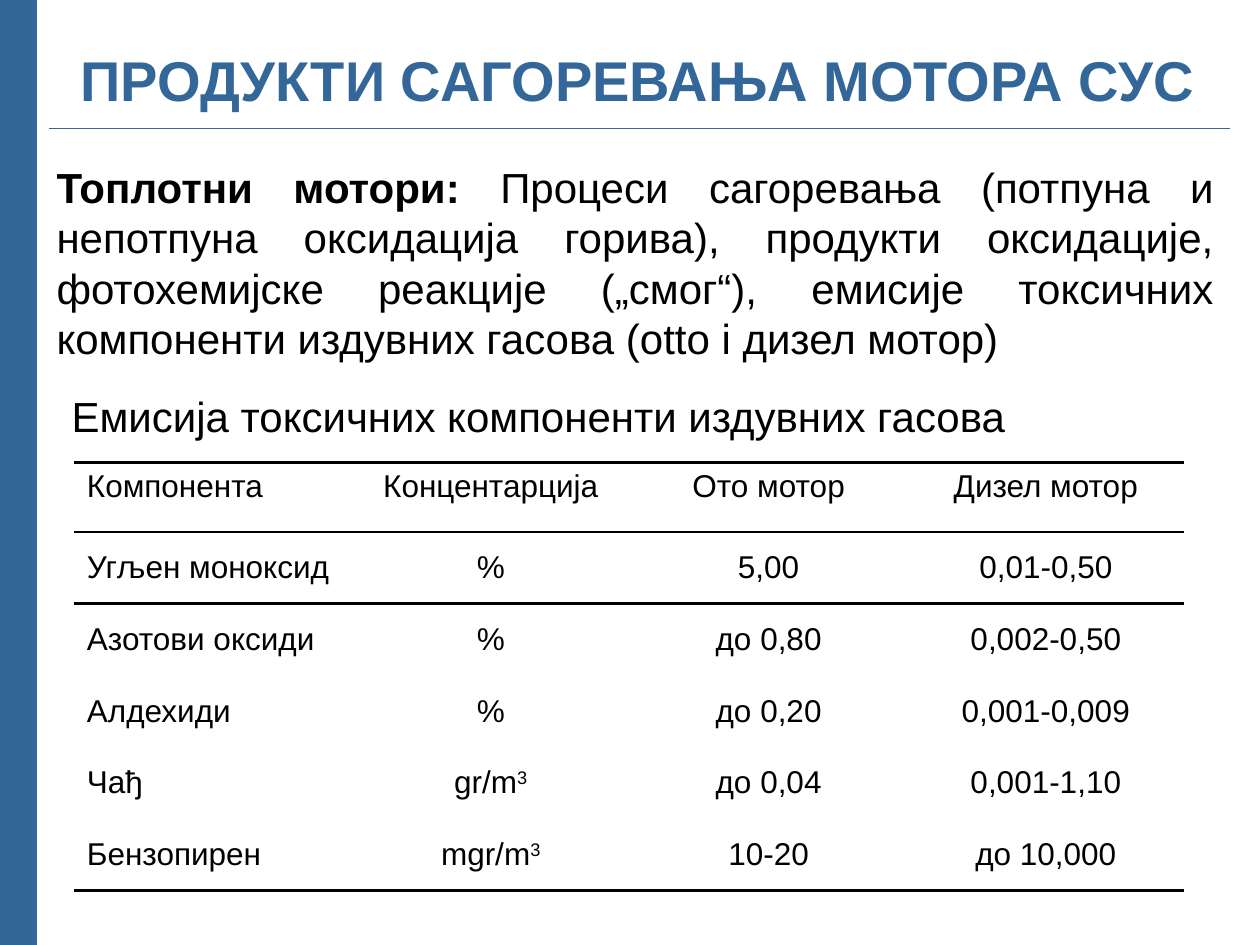
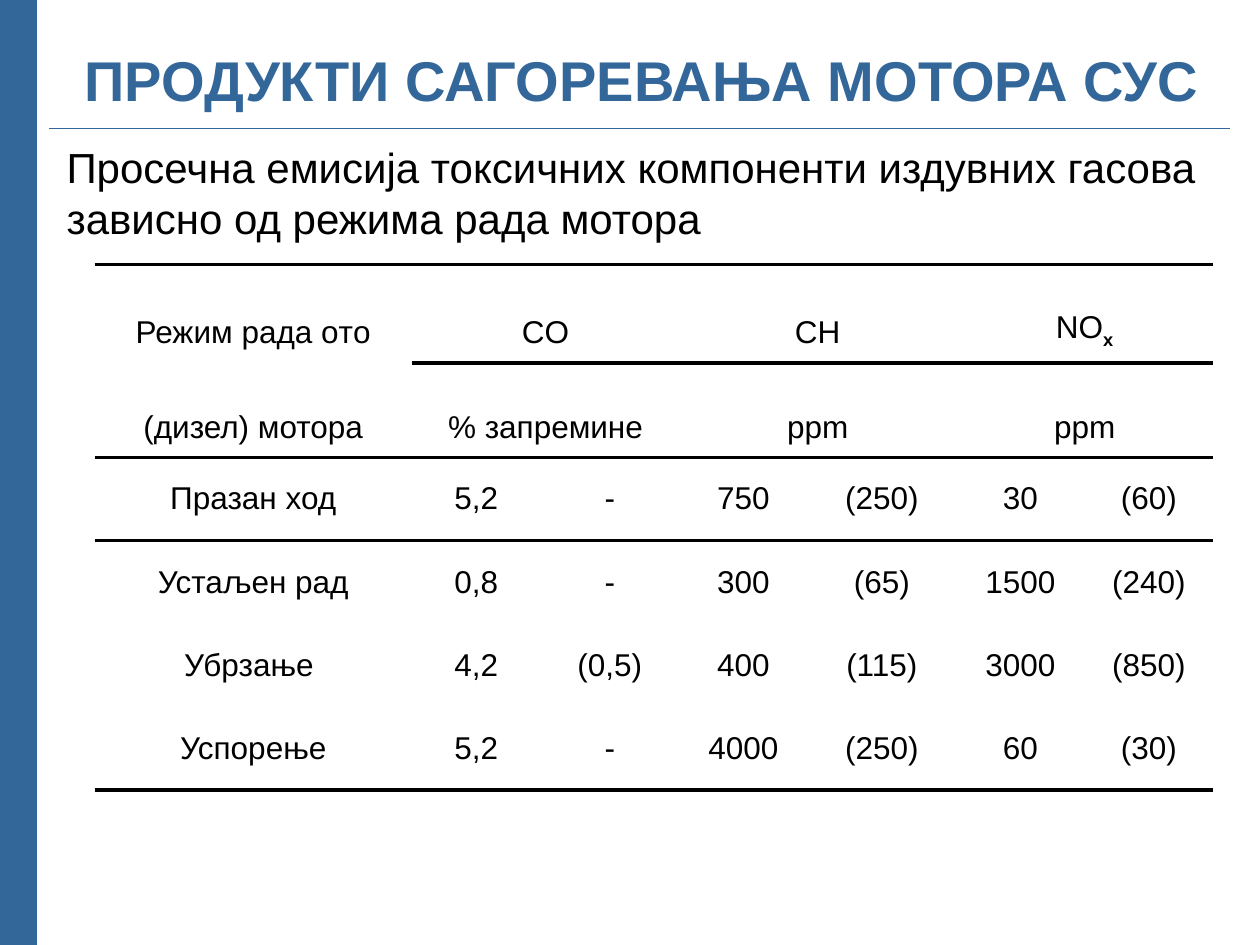
"""Build two slides with tables of combustion engine emissions."""
from lxml.etree import SubElement
from pptx import Presentation
from pptx.dml.color import RGBColor
from pptx.enum.shapes import MSO_CONNECTOR
from pptx.enum.text import MSO_ANCHOR, MSO_AUTO_SIZE, PP_ALIGN
from pptx.oxml import parse_xml
from pptx.oxml.ns import nsdecls, qn
from pptx.util import Inches, Pt

COLORS = {"accent": "336699", "text": "000000"}
FONT = "Arial"
TITLE = "ПРОДУКТИ САГОРЕВАЊА МОТОРА СУС"
NO_STYLE = "{2D5ABB26-0587-4C30-8999-92F81FD0307C}"
SCRIPTS = {"^": ("30000", False), "_": ("-25000", True)}
MASTER_LINES = [
    ((0.02, 0, 0.02, 7.5), 40),
    ((0.39, 1.02, 9.76, 1.02), 0.75),
]

SLIDES = [
    {
        "title_width": 9.26,
        "texts": [
            {
                "box": (0.35, 1.22, 9.38, 1.72),
                "align": PP_ALIGN.JUSTIFY,
                "wrap": True,
                "runs": [
                    ("Топлотни мотори: ", True),
                    ("Процеси сагоревања (потпуна и непотпуна оксидација горива), "
                     "продукти оксидације, фотохемијске реакције („смог“), емисије "
                     "токсичних компоненти издувних гасова (otto i дизел мотор)", False),
                ],
            },
            {
                "box": (0.47, 3.05, 7.68, 0.5),
                "align": PP_ALIGN.LEFT,
                "wrap": False,
                "runs": [("Емисија токсичних компоненти издувних гасова", False)],
            },
        ],
        "table_at": (0.59, 3.67),
        "columns": [2.2, 2.21, 2.2, 2.2],
        "rows": [0.55] + [0.57] * 5,
        "header_rows": 1,
        "header_format": {"vertical_anchor": MSO_ANCHOR.TOP},
        "first_align": PP_ALIGN.LEFT,
        "rules": [(0, 0, 1.5), (1, 0, 1.5), (6, 0, 2.25)],
        "values": [
            ["Компонента", "Концентарција", "Ото мотор", "Дизел мотор"],
            ["Угљен моноксид", "%", "5,00", "0,01-0,50"],
            ["Азотови оксиди", "%", "дo 0,80", "0,002-0,50"],
            ["Алдехиди", "%", "дo 0,20", "0,001-0,009"],
            ["Чађ", "gr/m^3", "дo 0,04", "0,001-1,10"],
            ["Бензопирен", "mgr/m^3", "10-20", "дo 10,000"],
        ],
    },
    {
        "title_width": 9.33,
        "texts": [
            {
                "box": (0.43, 1.07, 9.21, 0.91),
                "align": PP_ALIGN.LEFT,
                "wrap": True,
                "runs": [("Просечна емисија токсичних компоненти издувних гасова "
                          "зависно од режима рада мотора", False)],
            },
        ],
        "table_at": (0.75, 2.1),
        "columns": [2.52, 1.02, 1.1, 1.02, 1.18, 1.02, 1.02],
        "rows": [0.78, 0.75] + [0.66] * 4,
        "header_rows": 2,
        "header_format": {"vertical_anchor": MSO_ANCHOR.BOTTOM, "margin_bottom": Inches(0.1)},
        "first_align": PP_ALIGN.CENTER,
        "rules": [(0, 0, 2.25), (1, 1, 2.25), (2, 0, 2.25), (6, 0, 2.25)],
        "values": [
            ["Режим рада oтo", "CO", None, "CH", None, "NO_x", None],
            ["(дизел) мотора", "% запремине", None, "ppm", None, "ppm", None],
            ["Празан ход", "5,2", "-", "750", "(250)", "30", "(60)"],
            ["Устаљен рад", "0,8", "-", "300", "(65)", "1500", "(240)"],
            ["Убрзање ", "4,2", "(0,5)", "400", "(115)", "3000", "(850)"],
            ["Успорење", "5,2", "-", "4000", "(250)", "60", "(30)"],
        ],
    },
]


def add_run(paragraph, text, size, color="text", bold=False):
    run = paragraph.add_run()
    run.text = text
    run.font.color.rgb = RGBColor.from_string(COLORS[color])
    for name, value in {"name": FONT, "size": Pt(size), "bold": bold}.items():
        setattr(run.font, name, value)
    return run


def add_border(cell, side, width):
    cell._tc.get_or_add_tcPr().insert(0, parse_xml(
        f'<a:{side} {nsdecls("a")} w="{Pt(width)}"><a:solidFill>'
        f'<a:srgbClr val="{COLORS["text"]}"/></a:solidFill></a:{side}>'))


presentation = Presentation()
presentation.slide_width = Inches(10)
presentation.slide_height = Inches(7.5)

for content in SLIDES:
    slide = presentation.slides.add_slide(presentation.slide_layouts[5])

    title = slide.shapes.title
    title_box = (0.43, 0, content["title_width"], 1.25)
    for name, value in zip(("left", "top", "width", "height"), title_box):
        setattr(title, name, Inches(value))
    title.text_frame.auto_size = MSO_AUTO_SIZE.NONE
    title.text_frame.vertical_anchor = MSO_ANCHOR.MIDDLE
    paragraph = title.text_frame.paragraphs[0]
    paragraph.alignment = PP_ALIGN.CENTER
    add_run(paragraph, TITLE, 32, "accent", True)

    for ends, width in MASTER_LINES:
        line = slide.shapes.add_connector(MSO_CONNECTOR.STRAIGHT, *map(Inches, ends))
        line.line.color.rgb = RGBColor.from_string(COLORS["accent"])
        line.line.width = Pt(width)
        SubElement(line._element.spPr, qn("a:effectLst"))

    for text in content["texts"]:
        frame = slide.shapes.add_textbox(*map(Inches, text["box"])).text_frame
        frame_format = {
            "word_wrap": text["wrap"],
            "auto_size": MSO_AUTO_SIZE.SHAPE_TO_FIT_TEXT,
            "vertical_anchor": MSO_ANCHOR.MIDDLE,
        }
        for name, value in frame_format.items():
            setattr(frame, name, value)
        paragraph = frame.paragraphs[0]
        paragraph.alignment = text["align"]
        for words, bold in text["runs"]:
            add_run(paragraph, words, 24, bold=bold)

    columns, rows = content["columns"], content["rows"]
    size = (sum(columns), sum(rows))
    graphic_frame = slide.shapes.add_table(
        len(rows), len(columns), *map(Inches, content["table_at"] + size))
    table = graphic_frame.table
    table.first_row = table.horz_banding = False
    table._tbl.tblPr.find(qn("a:tableStyleId")).text = NO_STYLE
    for column, width in zip(table.columns, columns):
        column.width = Inches(width)
    for row, height in zip(table.rows, rows):
        row.height = Inches(height)

    for row_index, row_values in enumerate(content["values"]):
        is_header = row_index < content["header_rows"]
        cell_format = content["header_format"] if is_header else {"vertical_anchor": MSO_ANCHOR.MIDDLE}
        for column_index, value in enumerate(row_values):
            cell = table.cell(row_index, column_index)
            cell.fill.background()
            for side, line_index in (("lnB", row_index + 1), ("lnT", row_index)):
                for rule_index, first_column, width in content["rules"]:
                    if rule_index == line_index and column_index >= first_column:
                        add_border(cell, side, width)
            if value is None:
                table.cell(row_index, column_index - 1).merge(cell)
                continue
            for name, setting in cell_format.items():
                setattr(cell, name, setting)
            paragraph = cell.text_frame.paragraphs[0]
            paragraph.alignment = PP_ALIGN.CENTER if column_index else content["first_align"]
            mark = next((mark for mark in SCRIPTS if mark in value), None)
            base, script = value.split(mark) if mark else (value, "")
            add_run(paragraph, base, 18)
            if script:
                baseline, bold = SCRIPTS[mark]
                run = add_run(paragraph, script, 18, bold=bold)
                run._r.get_or_add_rPr().set("baseline", baseline)

presentation.save("out.pptx")
